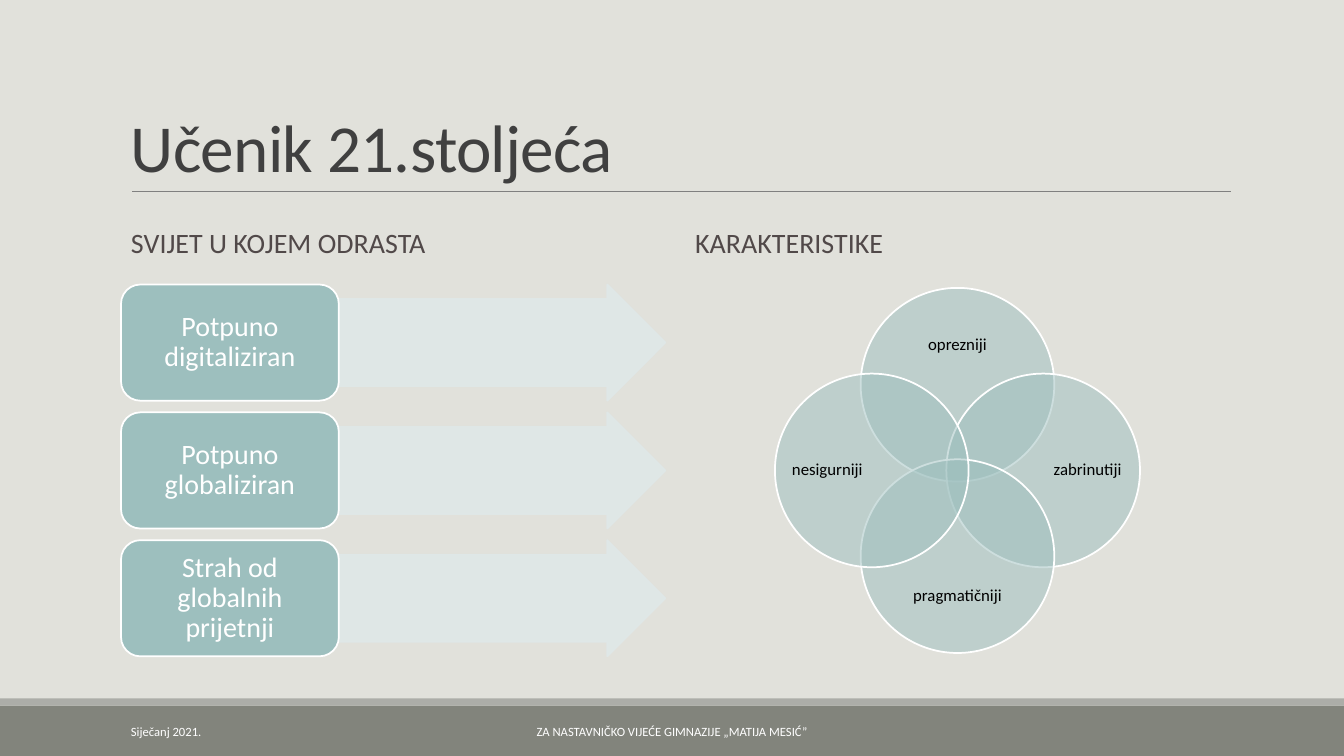
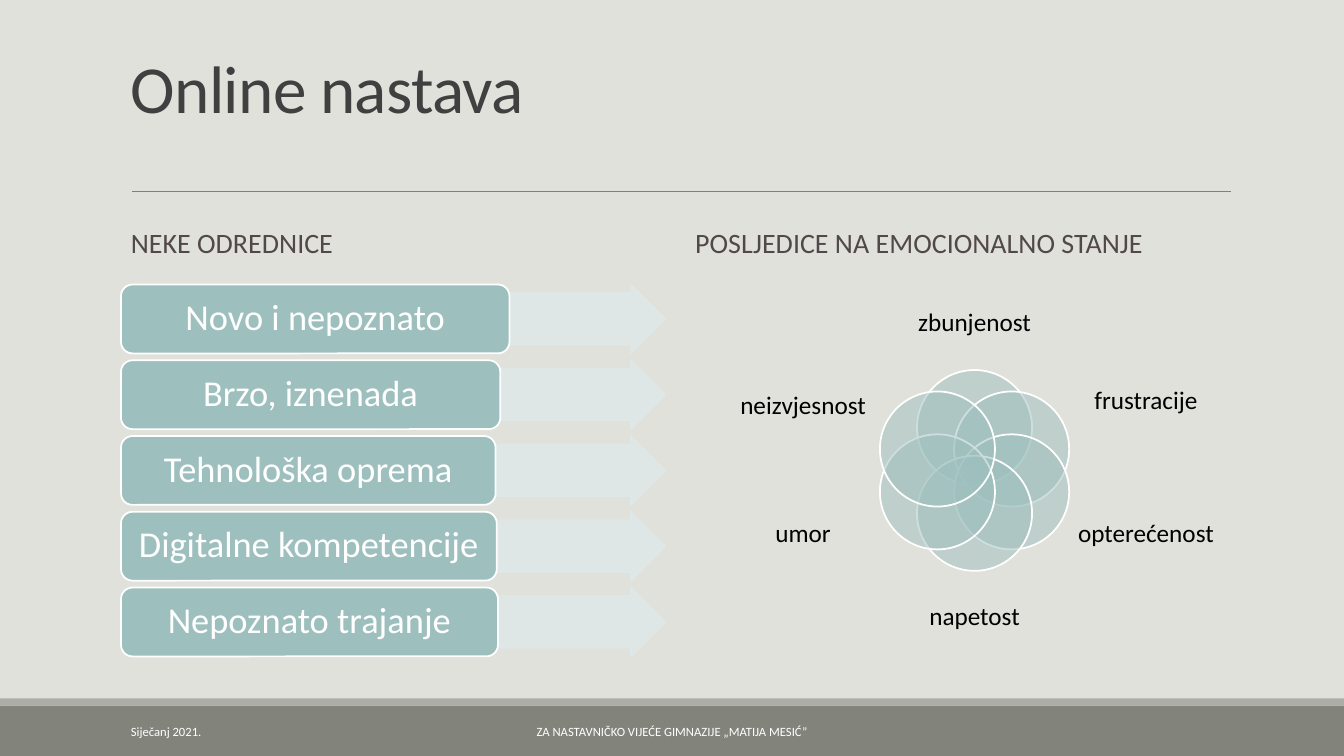
from dataclasses import dataclass
from math import cos, pi, sin

from pptx import Presentation
from pptx.dml.color import RGBColor
from pptx.enum.shapes import MSO_CONNECTOR, MSO_SHAPE
from pptx.enum.text import MSO_ANCHOR, PP_ALIGN
from pptx.oxml.ns import qn
from pptx.oxml.xmlchemy import OxmlElement
from pptx.util import Cm, Pt


@dataclass(frozen=True)
class Theme:
    font: str = "Calibri"
    background: str = "E1E1DB"
    band: str = "82847C"
    strip: str = "ACADA8"
    rule: str = "808080"
    title: str = "404040"
    heading: str = "514949"
    accent: str = "9DBFBE"
    arrow: str = "DFE8E8"
    white: str = "FFFFFF"
    black: str = "000000"
    title_size: float = 48
    heading_size: float = 20
    footer_size: float = 9
    outline: float = 1.25


@dataclass(frozen=True)
class Box:
    """Position and size in centimetres."""
    x: float
    y: float
    w: float
    h: float

    def emu(self):
        return Cm(self.x), Cm(self.y), Cm(self.w), Cm(self.h)


THEME = Theme()
WIDTH, HEIGHT = 33.87, 19.05
MARGIN, COLUMN_W = 3.05, 13.72
COLUMNS = (MARGIN, 17.27)
HEADING_Y, HEADING_H = 5.13, 2.06
BODY_Y, BODY_H = 7.17, 9.37
DATE = "Siječanj 2021."
FOOTER = "ZA NASTAVNIČKO VIJEĆE GIMNAZIJE „MATIJA MESIĆ”"


def rgb(color):
    return RGBColor.from_string(color)


def write(sp, text, size, color, align=PP_ALIGN.LEFT, anchor=MSO_ANCHOR.MIDDLE,
          spacing=0.9, inset=(0.25, 0.13)):
    tf = sp.text_frame
    tf.word_wrap = True
    tf.vertical_anchor = anchor
    tf.margin_left = tf.margin_right = Cm(inset[0])
    tf.margin_top = tf.margin_bottom = Cm(inset[1])
    tf.text = text
    p = tf.paragraphs[0]
    p.alignment = align
    p.line_spacing = spacing
    r = p.runs[0]
    r.font.name = THEME.font
    r.font.size = Pt(size)
    r.font.color.rgb = rgb(color)
    return p


def add_text(s, box, text, size, color, **style):
    return write(s.shapes.add_textbox(*box.emu()), text, size, color, **style)


def add_shape(s, kind, box, fill, line=None):
    sp = s.shapes.add_shape(kind, *box.emu())
    sp.shadow.inherit = False
    sp.fill.solid()
    sp.fill.fore_color.rgb = rgb(fill)
    if line:
        sp.line.color.rgb = rgb(line)
        sp.line.width = Pt(THEME.outline)
    else:
        sp.line.fill.background()
    return sp


def set_opacity(sp, percent, with_line=False):
    colors = ".//a:srgbClr" if with_line else "a:solidFill/a:srgbClr"
    for color in sp._element.spPr.xpath(colors):
        alpha = OxmlElement("a:alpha")
        alpha.set("val", str(percent * 1000))
        color.append(alpha)


def add_frame(s):
    """Draw the bottom bands, the title rule and the footer texts."""
    add_shape(s, MSO_SHAPE.RECTANGLE, Box(0, 17.78, WIDTH, 1.27), THEME.band)
    add_shape(s, MSO_SHAPE.RECTANGLE, Box(0, 17.6, WIDTH, 0.18), THEME.strip)
    rule = s.shapes.add_connector(MSO_CONNECTOR.STRAIGHT,
                                  Cm(3.33), Cm(4.83), Cm(31.01), Cm(4.83))
    rule.line.color.rgb = rgb(THEME.rule)
    rule.line.width = Pt(0.5)
    rule._element.spPr.append(OxmlElement("a:effectLst"))
    for x, w, text, align in ((MARGIN, 6.86, DATE, PP_ALIGN.LEFT),
                              (10.24, 13.39, FOOTER, PP_ALIGN.CENTER)):
        add_text(s, Box(x, 17.93, w, 1.02), text, THEME.footer_size,
                 THEME.white, align=align, spacing=1.0)


def add_title(s, text, height):
    p = add_text(s, Box(MARGIN, 0.79, 27.94, height), text, THEME.title_size,
                 THEME.title, anchor=MSO_ANCHOR.BOTTOM, spacing=0.85)
    p.runs[0]._r.get_or_add_rPr().set("spc", "-50")


def add_heading(s, box, text):
    p = add_text(s, box, text, THEME.heading_size, THEME.heading)
    p.space_before, p.space_after = Pt(12), Pt(2)


def add_arrow_list(s, box, rows, size):
    """Stack (text, label width) rows, each label followed by an arrow."""
    row_h = box.h / (len(rows) + 0.1 * (len(rows) - 1))
    for i, (text, label_w) in enumerate(rows):
        y = box.y + 1.1 * row_h * i
        arrow = add_shape(s, MSO_SHAPE.RIGHT_ARROW,
                          Box(box.x + label_w, y, box.w - label_w, row_h),
                          THEME.arrow, THEME.arrow)
        arrow.adjustments[0], arrow.adjustments[1] = 0.75, 0.5
        set_opacity(arrow, 90, with_line=True)
        label = add_shape(s, MSO_SHAPE.ROUNDED_RECTANGLE,
                          Box(box.x, y, label_w, row_h), THEME.accent, THEME.white)
        write(label, text, size, THEME.white, align=PP_ALIGN.CENTER, inset=(0.2, 0.1))


def add_venn(s, box, labels, ring, diameter, size, shift=0):
    """Set circles clockwise on a ring; labels are (text, dx, dy) from its centre."""
    cx, cy = box.x + box.w / 2 + shift, box.y + box.h / 2
    label_w, label_h = 4, 1.2
    for i, (text, dx, dy) in enumerate(labels):
        angle = 2 * pi * i / len(labels)
        x, y = cx + ring * sin(angle), cy - ring * cos(angle)
        circle = add_shape(s, MSO_SHAPE.OVAL,
                           Box(x - diameter / 2, y - diameter / 2, diameter, diameter),
                           THEME.accent, THEME.white)
        set_opacity(circle, 50)
        add_text(s, Box(cx + dx - label_w / 2, cy + dy - label_h / 2, label_w, label_h),
                 text, size, THEME.black, align=PP_ALIGN.CENTER, inset=(0, 0))


def add_comparison(prs, title, title_h, headings, arrows, venn):
    s = prs.slides.add_slide(prs.slide_layouts[6])
    add_frame(s)
    add_title(s, title, title_h)
    for x, heading in zip(COLUMNS, headings):
        add_heading(s, Box(x, HEADING_Y, COLUMN_W, HEADING_H), heading)
    left, right = (Box(x, BODY_Y, COLUMN_W, BODY_H) for x in COLUMNS)
    add_arrow_list(s, left, **arrows)
    add_venn(s, right, **venn)


def main():
    prs = Presentation()
    prs.slide_width, prs.slide_height = Cm(WIDTH), Cm(HEIGHT)
    fill = prs.slide_master.background.fill
    fill.solid()
    fill.fore_color.rgb = rgb(THEME.background)

    add_comparison(
        prs, "Učenik 21.stoljeća", 4.04,
        ("SVIJET U KOJEM ODRASTA", "KARAKTERISTIKE"),
        arrows=dict(size=20, rows=[
            ("Potpuno digitaliziran", 5.49),
            ("Potpuno globaliziran", 5.49),
            ("Strah od globalnih prijetnji", 5.49)]),
        venn=dict(size=12, ring=2.16, diameter=4.88, labels=[
            ("oprezniji", 0, -3.16),
            ("zabrinutiji", 3.28, 0),
            ("pragmatičniji", 0, 3.16),
            ("nesigurniji", -3.28, 0)]))

    add_comparison(
        prs, "Online nastava", 2.54,
        ("NEKE ODREDNICE", "POSLJEDICE NA EMOCIONALNO STANJE"),
        arrows=dict(size=26, rows=[
            ("Novo i nepoznato", 9.79),
            ("Brzo, iznenada", 9.56),
            ("Tehnološka oprema", 9.44),
            ("Digitalne kompetencije", 9.47),
            ("Nepoznato trajanje", 9.5)]),
        venn=dict(size=18, ring=1.08, diameter=2.9, shift=0.43, labels=[
            ("zbunjenost", 0, -3.7),
            ("frustracije", 4.32, -1.75),
            ("opterećenost", 4.32, 1.61),
            ("napetost", 0, 3.7),
            ("umor", -4.32, 1.61),
            ("neizvjesnost", -4.32, -1.61)]))

    prs.save("out.pptx")


if __name__ == "__main__":
    main()
